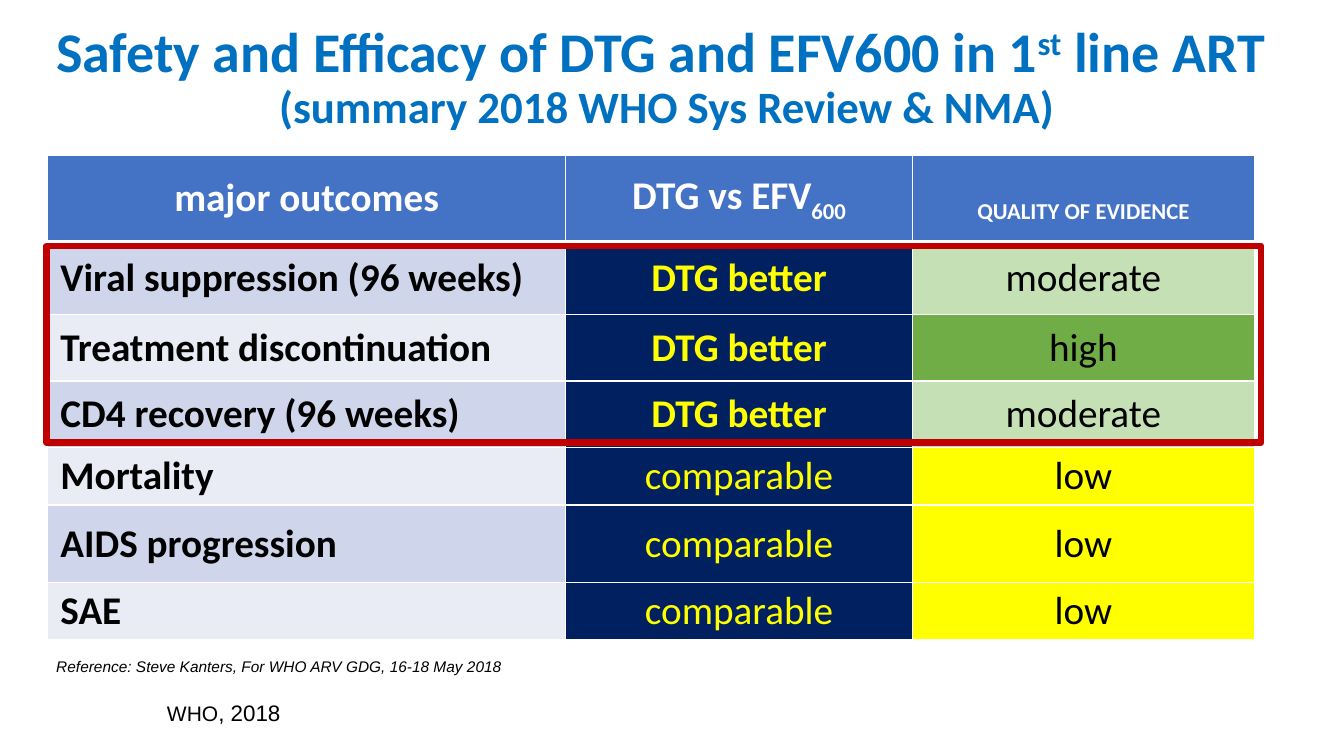
from dataclasses import dataclass
from lxml import etree
from pptx import Presentation
from pptx.dml.color import RGBColor
from pptx.enum.text import MSO_ANCHOR, PP_ALIGN
from pptx.enum.shapes import MSO_SHAPE
from pptx.oxml.ns import qn
from pptx.util import Inches, Pt

LEFT, CENTER, RIGHT = PP_ALIGN.LEFT, PP_ALIGN.CENTER, PP_ALIGN.RIGHT
MIDDLE, BOTTOM, TOP = MSO_ANCHOR.MIDDLE, MSO_ANCHOR.BOTTOM, MSO_ANCHOR.TOP
RECTANGLE = MSO_SHAPE.RECTANGLE


@dataclass(frozen=True)
class Theme:
    heading: str = "0070C0"
    header: str = "4472C4"
    bands: tuple = ("CFD5EA", "E9EBF5")
    verdict: str = "002060"
    yellow: str = "FFFF00"
    white: str = "FFFFFF"
    black: str = "000000"
    frame: str = "C00000"
    font: str = "Calibri"
    note_font: str = "Arial"
    title_size: int = 40
    subtitle_size: int = 32
    table_size: int = 28
    source_size: int = 16
    reference_size: int = 11


THEME = Theme()
QUALITY_FILLS = {"moderate": "C5E0B4", "high": "70AD47", "low": THEME.yellow}
COLUMNS = (5.14, 3.44, 3.39)
ROWS = (0.86, 0.72, 0.66, 0.66, 0.57, 0.77, 0.57)
OUTCOMES = (
    ("Viral suppression (96 weeks)", "DTG better", "moderate"),
    ("Treatment discontinuation", "DTG better", "high"),
    ("CD4 recovery (96 weeks)", "DTG better", "moderate"),
    ("Mortality", "comparable", "low"),
    ("AIDS progression", "comparable", "low"),
    ("SAE", "comparable", "low"),
)


def add_run(p, text, size, color, font=THEME.font, bold=False, italic=False, baseline=0):
    r = p.add_run()
    r.text = text
    r.font.size = Pt(size)
    r.font.name = font
    r.font.bold = bold
    r.font.italic = italic
    r.font.color.rgb = RGBColor.from_string(color)
    if baseline:
        r.font._element.set("baseline", str(baseline * 1000))


def add_text_box(s, box, align=LEFT, anchor=TOP):
    tf = s.shapes.add_textbox(*map(Inches, box)).text_frame
    tf.word_wrap = True
    tf.vertical_anchor = anchor
    p = tf.paragraphs[0]
    p.alignment = align
    return p


def set_borders(cell, top, bottom):
    tc_pr = cell._tc.get_or_add_tcPr()
    widths = {"lnL": 1, "lnR": 1, "lnT": top, "lnB": bottom}
    for i, (tag, width) in enumerate(widths.items()):
        ln = etree.Element(qn(f"a:{tag}"), w=str(Pt(width)))
        fill = etree.SubElement(ln, qn("a:solidFill"))
        etree.SubElement(fill, qn("a:srgbClr"), val=THEME.white)
        tc_pr.insert(i, ln)


def fill_cell(cell, fill, color, runs, align=CENTER, bold=True, top=1, bottom=1):
    cell.fill.solid()
    cell.fill.fore_color.rgb = RGBColor.from_string(fill)
    cell.vertical_anchor = MIDDLE
    cell.margin_left = cell.margin_right = Inches(0.13)
    cell.margin_top = cell.margin_bottom = Inches(0.05)
    p = cell.text_frame.paragraphs[0]
    p.alignment = align
    for text, baseline in runs:
        add_run(p, text, THEME.table_size, color, bold=bold, baseline=baseline)
    set_borders(cell, top, bottom)


def add_title(s, box):
    p = add_text_box(s, box, CENTER, BOTTOM)
    p.line_spacing = 0.9
    for text, baseline in (("Safety and Efficacy of DTG and EFV600 in 1", 0),
                           ("st", 30), (" line ART ", 0)):
        add_run(p, text, THEME.title_size, THEME.heading, bold=True, baseline=baseline)
    p.add_line_break()
    add_run(p, "(summary 2018 WHO Sys Review & NMA)", THEME.subtitle_size,
            THEME.heading, bold=True)


def add_outcomes(s, left, top):
    table = s.shapes.add_table(len(ROWS), len(COLUMNS), Inches(left), Inches(top),
                               Inches(sum(COLUMNS)), Inches(sum(ROWS))).table
    for column, width in zip(table.columns, COLUMNS):
        column.width = Inches(width)
    for row, height in zip(table.rows, ROWS):
        row.height = Inches(height)

    # Header row
    headers = ([("major outcomes", 0)],
               [("DTG vs EFV", 0), ("600", -25)],
               [("QUALITY OF EVIDENCE", -25)])
    for col, runs in enumerate(headers):
        fill_cell(table.cell(0, col), THEME.header, THEME.white, runs, bottom=3)

    # Outcome rows
    for row, (outcome, verdict, quality) in enumerate(OUTCOMES, 1):
        line = 3 if row == 1 else 1
        fill_cell(table.cell(row, 0), THEME.bands[(row - 1) % 2], THEME.black,
                  [(outcome, 0)], align=LEFT, top=line)
        fill_cell(table.cell(row, 1), THEME.verdict, THEME.yellow, [(verdict, 0)],
                  bold=verdict == "DTG better", top=line)
        fill_cell(table.cell(row, 2), QUALITY_FILLS[quality], THEME.black,
                  [(quality, 0)], bold=False, top=line)


def add_notes(s, source_box, reference_box):
    p = add_text_box(s, source_box, RIGHT)
    add_run(p, "WHO", THEME.source_size - 1, THEME.black, THEME.note_font)
    add_run(p, ", 2018", THEME.source_size, THEME.black, THEME.note_font)
    p = add_text_box(s, reference_box)
    add_run(p, "Reference: Steve Kanters, For WHO ARV GDG, 16-18 May 2018",
            THEME.reference_size, THEME.black, THEME.note_font, italic=True)


def add_highlight(s, box):
    frame = s.shapes.add_shape(RECTANGLE, *map(Inches, box))
    frame.shadow.inherit = False
    frame.fill.background()
    frame.line.color.rgb = RGBColor.from_string(THEME.frame)
    frame.line.width = Pt(4.5)


def main():
    prs = Presentation()
    prs.slide_width, prs.slide_height = Inches(13.33), Inches(7.5)
    s = prs.slides.add_slide(prs.slide_layouts[6])
    add_title(s, (0.16, 0.27, 12.91, 1.1))
    add_outcomes(s, 0.47, 1.54)
    add_notes(s, (0.78, 6.89, 2.1, 0.37), (0.46, 6.47, 5.4, 0.29))
    add_highlight(s, (0.46, 2.44, 12.05, 1.95))
    prs.save("out.pptx")


if __name__ == "__main__":
    main()
